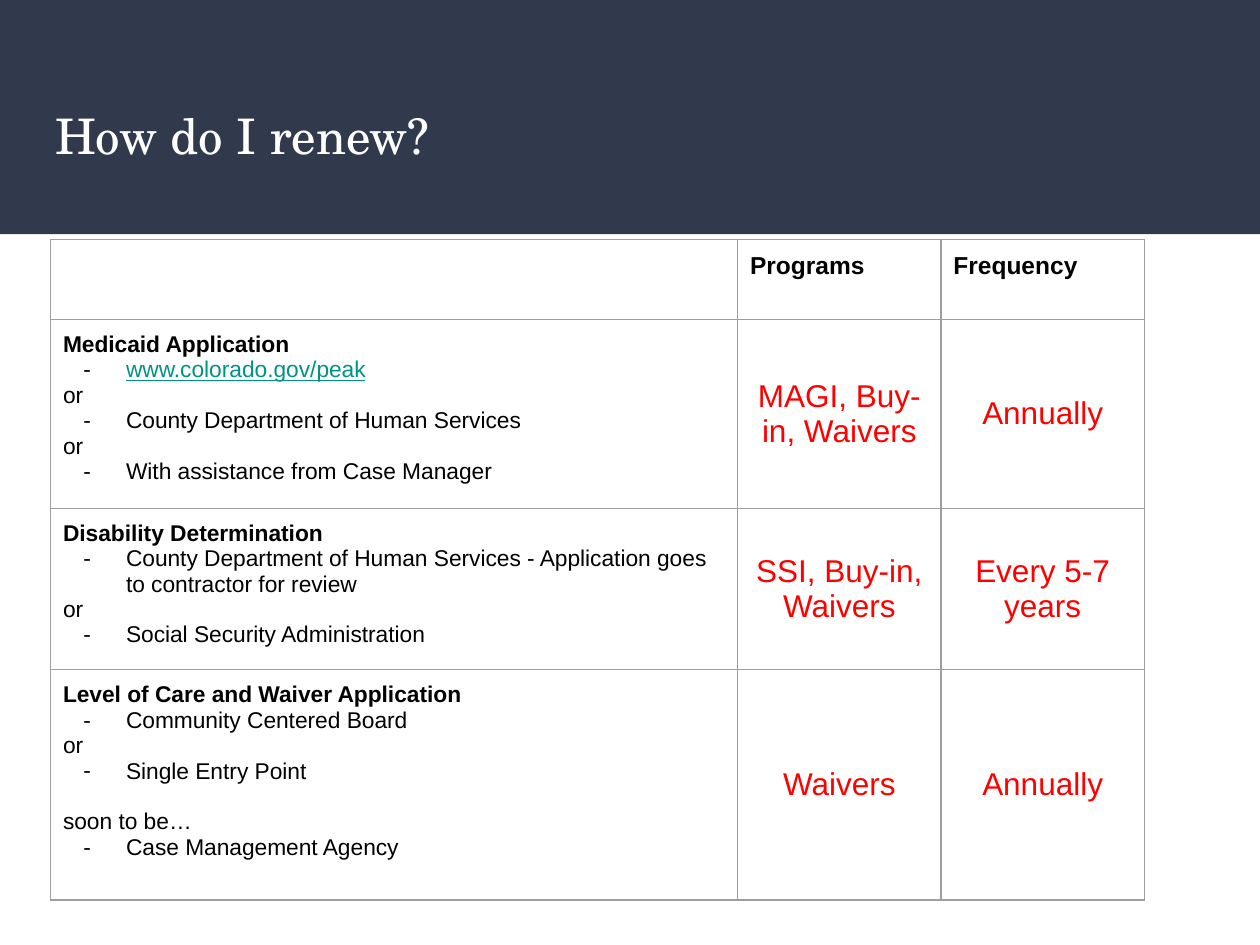
"""Build the slide on how, and how often, each programme is renewed."""
from pptx import Presentation
from pptx.dml.color import RGBColor
from pptx.enum.shapes import MSO_SHAPE
from pptx.enum.text import MSO_ANCHOR, PP_ALIGN
from pptx.oxml import parse_xml
from pptx.oxml.ns import nsdecls
from pptx.util import Cm, Pt

RECTANGLE = MSO_SHAPE.RECTANGLE
TOP, MIDDLE = MSO_ANCHOR.TOP, MSO_ANCHOR.MIDDLE
LEFT, CENTER = PP_ALIGN.LEFT, PP_ALIGN.CENTER

NAVY, WHITE, BLACK = "31394D", "FFFFFF", "000000"
RED, GREEN, GRAY = "FF0000", "009384", "9E9E9E"
PADDING = Cm(0.25)
WEBSITE = "- www.colorado.gov/peak"
COLUMN_WIDTHS = (13.85, 4.1, 4.1)
ROW_HEIGHTS = (1.61, 3.61, 3.07, 4.64)
RENEWALS = [
    ([""], "Programs", "Frequency"),
    (["Medicaid Application", WEBSITE, "or",
      "- County Department of Human Services", "or",
      "- With assistance from Case Manager"],
     "MAGI, Buy-in, Waivers", "Annually"),
    (["Disability Determination",
      "- County Department of Human Services - Application goes to contractor for review",
      "or", "- Social Security Administration"],
     "SSI, Buy-in, Waivers", "Every 5-7 years"),
    (["Level of Care and Waiver Application", "- Community Centered Board", "or",
      "- Single Entry Point", "soon to be…", "- Case Management Agency"],
     "Waivers", "Annually"),
]


def color(value):
    return RGBColor.from_string(value)


def write(paragraph, text, size, ink, bold=False, font="Arial"):
    paragraph.text = text
    for run in paragraph.runs:
        run.font.name = font
        run.font.size = Pt(size)
        run.font.bold = bold
        run.font.color.rgb = color(ink)


deck = Presentation()
deck.slide_width, deck.slide_height = Cm(25.4), Cm(19.05)
slide = deck.slides.add_slide(deck.slide_layouts[6])

banner = slide.shapes.add_shape(RECTANGLE, 0, 0, deck.slide_width, Cm(4.72))
banner.shadow.inherit = False
banner.fill.solid()
banner.fill.fore_color.rgb = color(NAVY)
banner.line.fill.background()

title = slide.shapes.add_textbox(Cm(0.86), Cm(1.88), Cm(23.67), Cm(2.31)).text_frame
title.word_wrap = True
title.margin_left = title.margin_right = title.margin_top = title.margin_bottom = PADDING
write(title.paragraphs[0], "How do I renew?", 28, WHITE, font="TeX Gyre Schola")

schedule = slide.shapes.add_table(
    len(ROW_HEIGHTS), len(COLUMN_WIDTHS), Cm(1.02), Cm(4.83),
    Cm(sum(COLUMN_WIDTHS)), Cm(sum(ROW_HEIGHTS))).table
schedule.first_row = schedule.horz_banding = False
for column, width in zip(schedule.columns, COLUMN_WIDTHS):
    column.width = Cm(width)
for row, height in zip(schedule.rows, ROW_HEIGHTS):
    row.height = Cm(height)

for cell in schedule.iter_cells():
    cell.margin_left = cell.margin_right = cell.margin_top = cell.margin_bottom = PADDING
    borders = cell._tc.get_or_add_tcPr()
    for side in ("lnL", "lnR", "lnT", "lnB"):
        borders.append(parse_xml(
            f'<a:{side} {nsdecls("a")} w="{Pt(0.75)}"><a:solidFill>'
            f'<a:srgbClr val="{GRAY}"/></a:solidFill></a:{side}>'))
    cell.fill.background()

for row_index, (steps, programs, frequency) in enumerate(RENEWALS):
    is_header = row_index == 0
    for column_index, answer in enumerate((programs, frequency), start=1):
        cell = schedule.cell(row_index, column_index)
        cell.vertical_anchor = TOP if is_header else MIDDLE
        paragraph = cell.text_frame.paragraphs[0]
        paragraph.alignment = LEFT if is_header else CENTER
        write(paragraph, answer, 14 if is_header else 18,
              BLACK if is_header else RED, bold=is_header)

    how_to = schedule.cell(row_index, 0).text_frame
    how_to.text = "\n".join(steps)
    for step_index, (paragraph, step) in enumerate(zip(how_to.paragraphs, steps)):
        write(paragraph, step.removeprefix("- "), 13,
              GREEN if step == WEBSITE else BLACK, bold=step_index == 0)
        if step == WEBSITE:
            paragraph.runs[0].font.underline = True
        if step == "soon to be…":
            paragraph.space_before = Pt(14.5)
        if step.startswith("- "):
            bullet = paragraph._p.get_or_add_pPr()
            bullet.set("marL", str(Cm(1.27)))
            bullet.set("indent", str(Cm(-0.86)))
            for tag in (f'buClr {nsdecls("a")}><a:srgbClr val="{BLACK}"/></a:buClr',
                        f'buFont {nsdecls("a")} typeface="Arial"/',
                        f'buChar {nsdecls("a")} char="-"/'):
                bullet.append(parse_xml(f"<a:{tag}>"))

deck.save("out.pptx")
